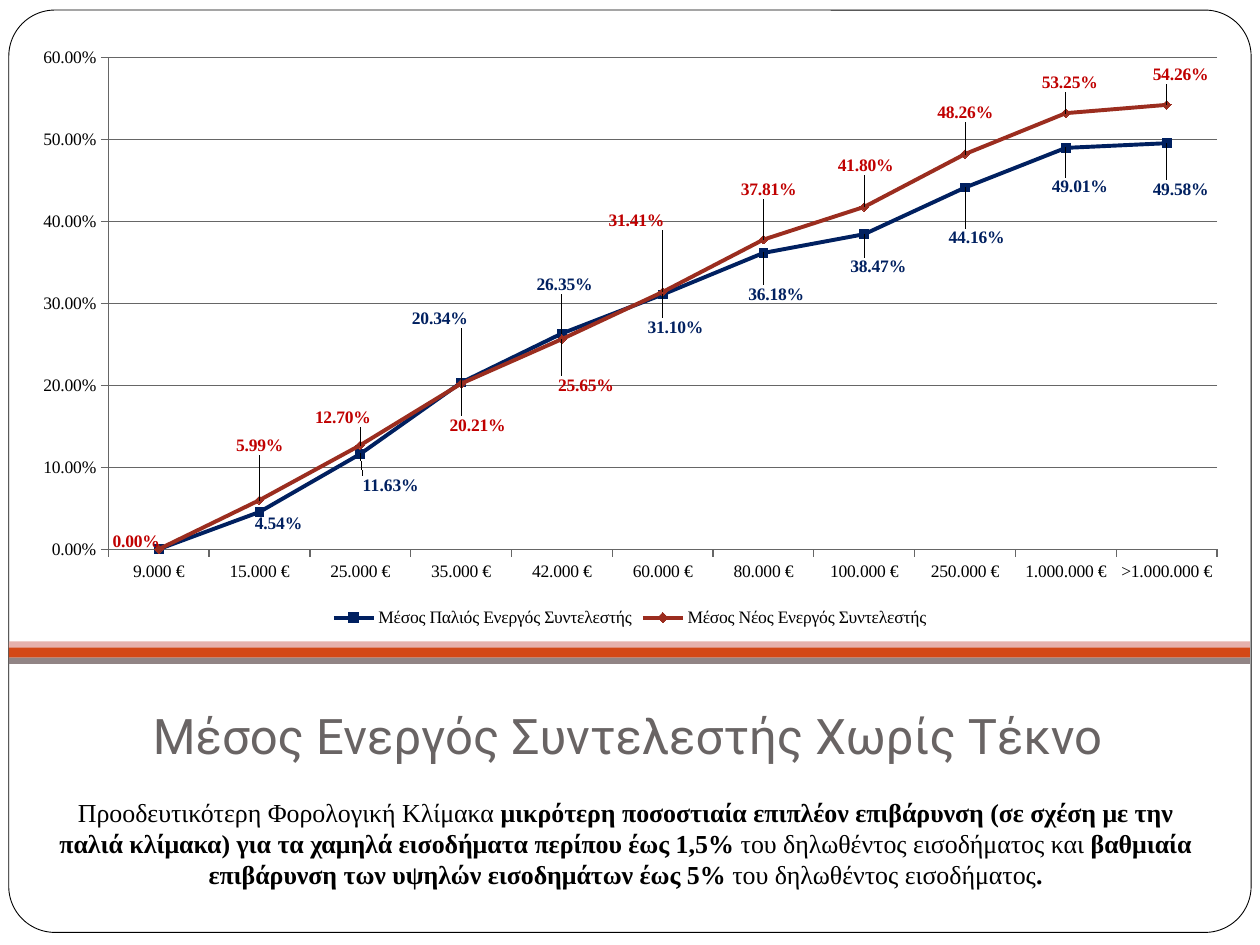
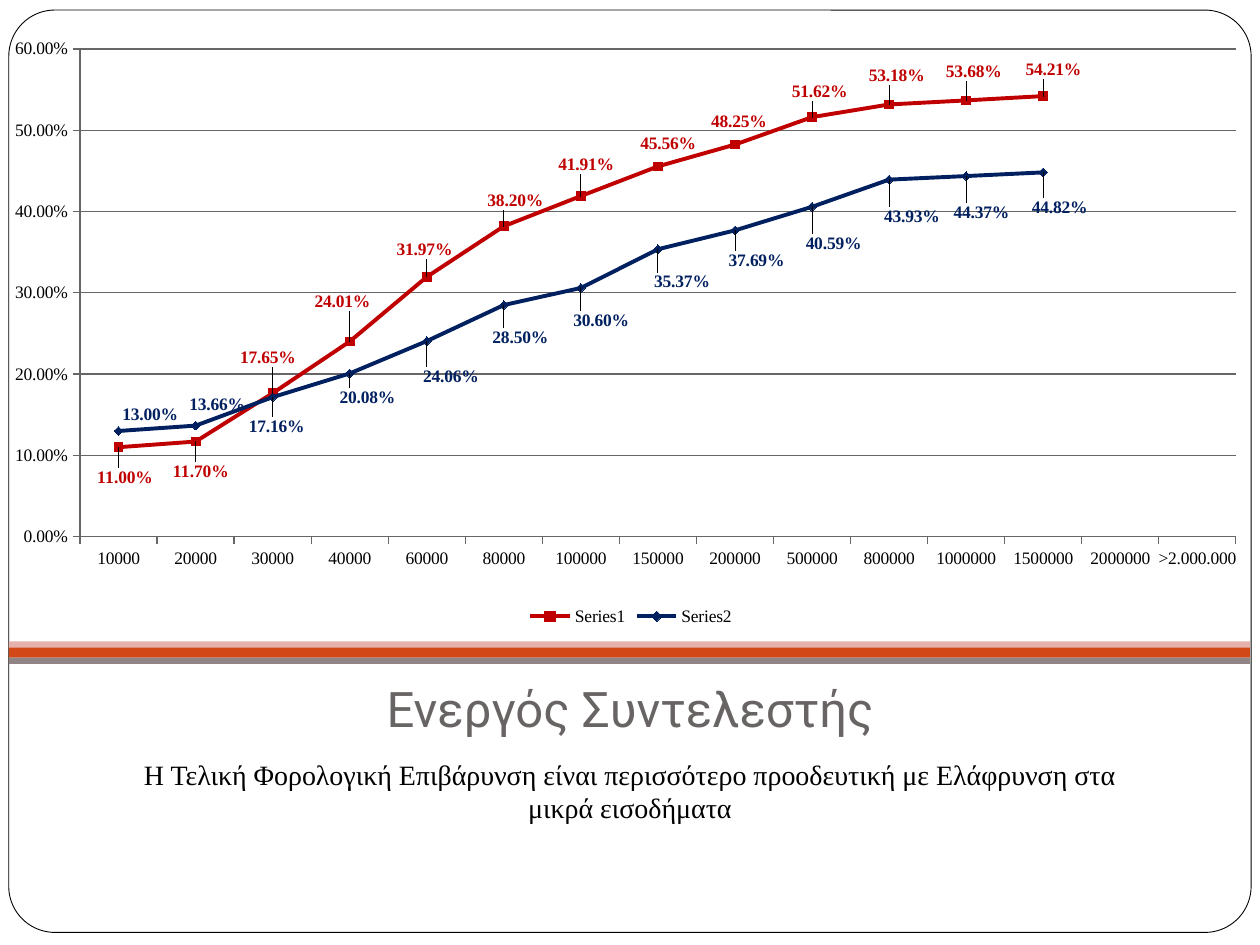
from pptx import Presentation
from pptx import util as u
from pptx.chart.data import CategoryChartData
from pptx.dml.color import RGBColor
from pptx.enum import chart as ch, shapes, text
from pptx.oxml import parse_xml
from pptx.oxml.ns import nsdecls

NAVY, RED, BRICK, GREY = "002060", "C00000", "9B2D1F", "666666"
SERIF, SANS = "Times New Roman", "Roboto"
BANDS = [(5.12, 0.1, "D34817"), (5.09, 0.05, "E6B1AC"), (5.22, 0.05, "918485")]
MARKERS = [ch.XL_MARKER_STYLE.SQUARE, ch.XL_MARKER_STYLE.DIAMOND]
PERCENT = "0.00%"


def rgb(value):
    """Turn a hex string into a colour."""
    return RGBColor.from_string(value)


def inches(box):
    """Turn a box of numbers into lengths."""
    return [u.Inches(v) for v in box]


def set_font(font, name, size, color, bold=None):
    """Set the usual font properties."""
    font.name, font.size, font.bold = name, u.Pt(size), bold
    font.color.rgb = rgb(color)


def add_box(s, kind, box, fill):
    """Add a filled shape without outline or shadow."""
    sp = s.shapes.add_shape(kind, *inches(box))
    sp.shadow.inherit = False
    sp.fill.solid()
    sp.fill.fore_color.rgb = rgb(fill)
    sp.line.fill.background()
    return sp


def add_frame(s):
    """Draw the rounded frame and the three bands."""
    frame = add_box(s, shapes.MSO_SHAPE.ROUNDED_RECTANGLE, (0.07, 0.08, 9.86, 7.32), "FFFFFF")
    frame.adjustments[0] = 0.05
    frame.line.color.rgb = rgb("000000")
    frame.line.width = u.Pt(0.5)
    for top, height, color in BANDS:
        add_box(s, shapes.MSO_SHAPE.RECTANGLE, (0.07, top, 9.85, height), color)


def add_title(s, box, words):
    """Place the title placeholder above the frame."""
    title = s.shapes.title
    title.element.getparent().append(title.element)
    title.left, title.top, title.width, title.height = inches(box)
    tf = title.text_frame
    tf.text = words
    tf.word_wrap = True
    tf.auto_size = text.MSO_AUTO_SIZE.NONE
    tf.vertical_anchor = text.MSO_ANCHOR.MIDDLE
    tf.margin_left, tf.margin_top, tf.margin_right, tf.margin_bottom = inches((0.1, 0.05, 0.1, 0.1))
    p = tf.paragraphs[0]
    p.alignment = text.PP_ALIGN.CENTER
    set_font(p.font, SANS, 28, "696464")


def add_body(s, box, size, runs):
    """Write a centred paragraph whose runs alternate regular and bold."""
    tf = s.shapes.add_textbox(*inches(box)).text_frame
    tf.word_wrap = True
    p = tf.paragraphs[0]
    p.alignment = text.PP_ALIGN.CENTER
    p.space_before = u.Pt(5.8)
    set_font(p.font, SERIF, size, "000000")
    for i, words in enumerate(runs):
        r = p.add_run()
        r.text = words
        r.font.bold = i % 2 == 1


def manual_layout(x, y, size=""):
    """Build a manual chart layout."""
    return parse_xml(f'<c:layout {nsdecls("c")}><c:manualLayout>{size}'
                     f'<c:x val="{x:.4f}"/><c:y val="{y:.4f}"/></c:manualLayout></c:layout>')


def place_plot(chart, box, plot):
    """Fix the inner plot area, both boxes being in inches on the slide."""
    left, top, width, height = box
    layout = manual_layout((plot[0] - left) / width, (plot[1] - top) / height,
                           '<c:layoutTarget val="inner"/><c:xMode val="edge"/><c:yMode val="edge"/>')
    for tag, share in (("w", plot[2] / width), ("h", plot[3] / height)):
        layout[0].append(parse_xml(f'<c:{tag} {nsdecls("c")} val="{share:.4f}"/>'))
    area = chart.element.xpath(".//c:plotArea")[0]
    for old in area.xpath("c:layout"):
        area.remove(old)
    area.insert(0, layout)


def format_axes(chart):
    """Set the percent scale, gridlines and ticks."""
    axis = chart.value_axis
    axis.minimum_scale, axis.maximum_scale, axis.major_unit = 0, 0.6, 0.1
    axis.tick_labels.number_format = PERCENT
    axis.tick_labels.number_format_is_linked = False
    axis.has_major_gridlines = True
    lines = [axis.major_gridlines.format.line]
    for ax in (axis, chart.category_axis):
        ax.major_tick_mark = ch.XL_TICK_MARK.OUTSIDE
        lines.append(ax.format.line)
    for line in lines:
        line.color.rgb = rgb(GREY)
        line.width = u.Pt(0.75)


def format_series(ser, color, marker):
    """Colour a line and its markers."""
    ser.smooth = False
    ser.format.line.color.rgb = rgb(color)
    ser.format.line.width = u.Pt(2.25)
    ser.marker.style, ser.marker.size = marker, 5
    ser.marker.format.fill.solid()
    ser.marker.format.fill.fore_color.rgb = rgb(color)
    ser.marker.format.line.color.rgb = rgb(color)


def label_points(chart, index, color, first, offsets, box):
    """Put each value label at its offset in inches from its point."""
    ser = chart.plots[0].series[index]
    labels = ser.data_labels
    labels.show_value = False
    labels.number_format, labels.number_format_is_linked = PERCENT, False
    set_font(labels.font, SERIF, 10, color, True)
    for i in range(first, first + len(offsets)):
        label = ser.points[i].data_label
        set_font(label.font, SERIF, 10, color, True)
        label.position = ch.XL_LABEL_POSITION.CENTER
    nodes = chart.element.xpath(".//c:ser")[index].xpath("c:dLbls/c:dLbl")
    for node, (dx, dy) in zip(nodes, offsets):
        node.insert(1, manual_layout(dx / box[2], dy / box[3]))


def add_line_chart(s, box, plot, cats, series):
    """Add a line chart from (name, values, line, label colour, first label, offsets)."""
    data = CategoryChartData(number_format=PERCENT)
    data.categories = cats
    for name, values, *_ in series:
        data.add_series(name, [round(v / 100, 4) for v in values])
    chart = s.shapes.add_chart(ch.XL_CHART_TYPE.LINE_MARKERS, *inches(box), data).chart
    set_font(chart.font, SERIF, 10, "000000")
    chart.has_title = False
    chart.has_legend = True
    chart.legend.position = ch.XL_LEGEND_POSITION.BOTTOM
    chart.legend.include_in_layout = False
    chart.plots[0].vary_by_categories = False
    place_plot(chart, box, plot)
    format_axes(chart)
    for i, (_, _, color, label_color, first, offsets) in enumerate(series):
        format_series(chart.plots[0].series[i], color, MARKERS[i])
        label_points(chart, i, label_color, first, offsets, box)


def new_slide(prs):
    """Start a title-only slide with the shared frame."""
    s = prs.slides.add_slide(prs.slide_layouts[5])
    add_frame(s)
    return s


def build_childless_slide(prs):
    """Build the slide on the average rate without children."""
    s = new_slide(prs)
    add_title(s, (0.98, 5.48, 8, 0.75), "Μέσος Ενεργός Συντελεστής Χωρίς Τέκνο")
    add_body(s, (0.28, 6.27, 9.37, 0.99), 14.8, [
        "Προοδευτικότερη Φορολογική Κλίμακα ",
        "μικρότερη ποσοστιαία επιπλέον επιβάρυνση (σε σχέση με την παλιά κλίμακα) "
        "για τα χαμηλά εισοδήματα περίπου έως 1,5% ",
        "του δηλωθέντος εισοδήματος και ",
        "βαθμιαία επιβάρυνση των υψηλών εισοδημάτων έως 5% ",
        "του δηλωθέντος εισοδήματος", "."])
    amounts = ["9.000", "15.000", "25.000", "35.000", "42.000", "60.000", "80.000",
               "100.000", "250.000", "1.000.000", ">1.000.000"]
    add_line_chart(s, (0.15, 0.29, 9.7, 4.73), (0.86, 0.46, 8.8, 3.9), [f"{a} €" for a in amounts], [
        ("Μέσος Παλιός Ενεργός Συντελεστής",
         [0, 4.54, 11.63, 20.34, 26.35, 31.1, 36.18, 38.47, 44.16, 49.01, 49.58], NAVY, NAVY, 1,
         [(0.15, 0.09), (0.24, 0.25), (-0.17, -0.51), (0.02, -0.39), (0.1, 0.26),
          (0.1, 0.33), (0.11, 0.26), (0.09, 0.4), (0.11, 0.31), (0.11, 0.37)]),
        ("Μέσος Νέος Ενεργός Συντελεστής",
         [0, 5.99, 12.7, 20.21, 25.65, 31.41, 37.81, 41.8, 48.26, 53.25, 54.26], BRICK, RED, 0,
         [(-0.18, -0.06), (0, -0.43), (-0.14, -0.22), (0.13, 0.33), (0.19, 0.37), (-0.21, -0.57),
          (0.04, -0.4), (0.01, -0.33), (0, -0.33), (0.03, -0.24), (0.11, -0.24)])])


def build_final_burden_slide(prs):
    """Build the slide on the final tax burden."""
    s = new_slide(prs)
    add_title(s, (1, 5.36, 8, 0.57), "Ενεργός Συντελεστής")
    add_body(s, (1, 5.96, 8, 0.75), 16, [
        "Η Τελική Φορολογική Επιβάρυνση είναι περισσότερο προοδευτική με Ελάφρυνση στα μικρά εισοδήματα"])
    cats = ["10000", "20000", "30000", "40000", "60000", "80000", "100000", "150000", "200000",
            "500000", "800000", "1000000", "1500000", "2000000", ">2.000.000"]
    add_line_chart(s, (0.12, 0.21, 9.76, 4.8), (0.62, 0.39, 9.19, 3.87), cats, [
        ("Series1",
         [11, 11.7, 17.65, 24.01, 31.97, 38.2, 41.91, 45.56, 48.25, 51.62, 53.18, 53.68, 54.21],
         RED, RED, 0,
         [(0.05, 0.24), (0.04, 0.24), (-0.04, -0.28), (-0.06, -0.32), (-0.02, -0.22),
          (0.09, -0.2), (0.04, -0.25), (0.08, -0.18), (0.03, -0.18), (0.06, -0.2),
          (0.06, -0.23), (0.06, -0.23), (0.08, -0.21)]),
        ("Series2",
         [13, 13.66, 17.16, 20.08, 24.06, 28.5, 30.6, 35.37, 37.69, 40.59, 43.93, 44.37, 44.82],
         NAVY, NAVY, 0,
         [(0.25, -0.13), (0.17, -0.17), (0.03, 0.23), (0.14, 0.19), (0.19, 0.28),
          (0.13, 0.26), (0.16, 0.26), (0.19, 0.26), (0.17, 0.24), (0.17, 0.29),
          (0.18, 0.29), (0.12, 0.29), (0.13, 0.28)])])


def main():
    """Build and save the presentation."""
    prs = Presentation()
    prs.slide_width, prs.slide_height = inches((10, 7.5))
    build_childless_slide(prs)
    build_final_burden_slide(prs)
    prs.save("out.pptx")


if __name__ == "__main__":
    main()
